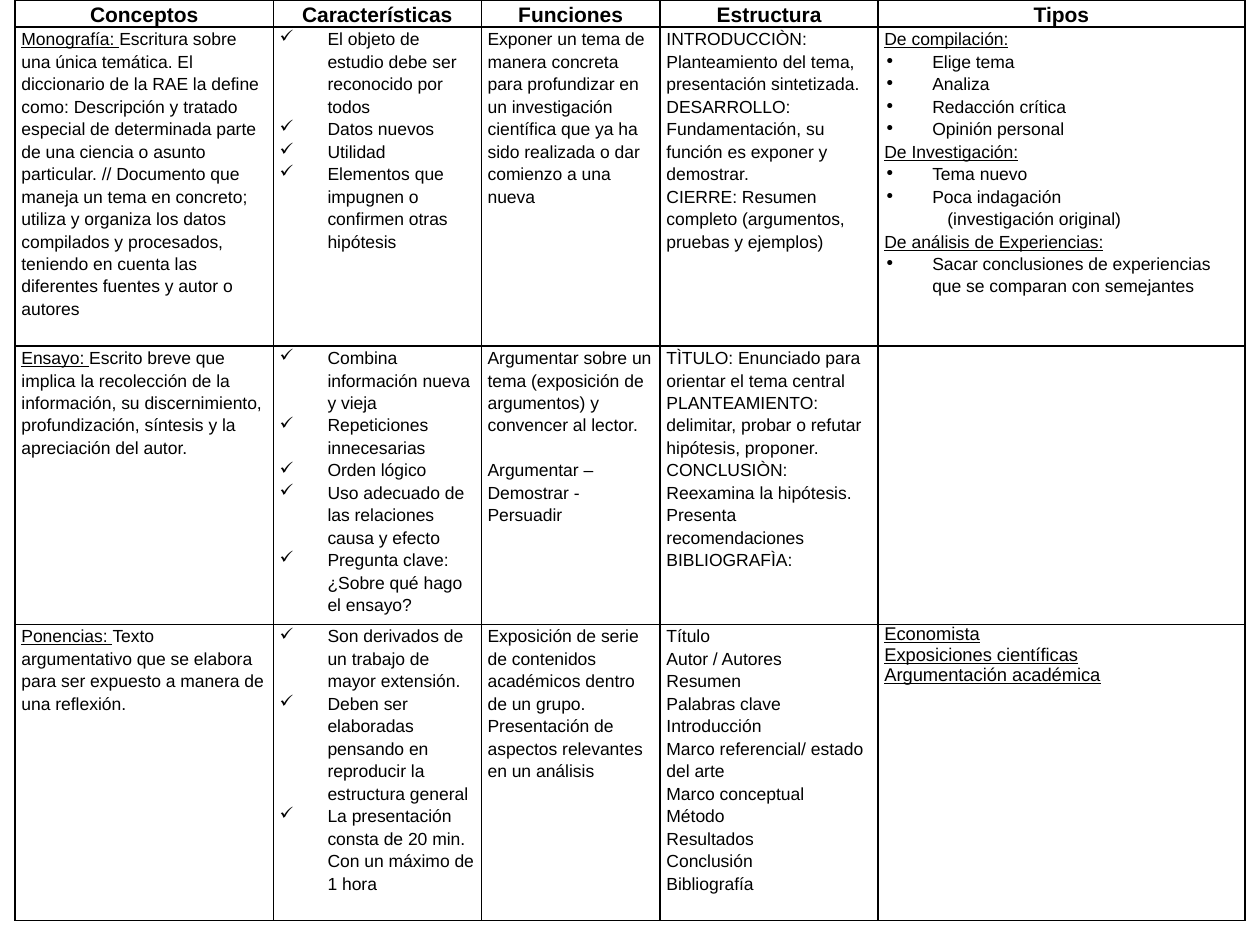
"""Build a slide with a table that compares three kinds of academic text."""
from dataclasses import dataclass

from lxml.etree import SubElement as Sub
from pptx import Presentation as Deck
from pptx.dml.color import RGBColor as Color
from pptx.enum.text import PP_ALIGN as Align
from pptx.oxml import parse_xml
from pptx.oxml.ns import nsdecls, qn
from pptx.util import Inches, Pt


@dataclass
class Theme:
    font: str = "Arial"
    ink: str = "000000"
    head: float = 12
    body: float = 10
    large: float = 10.5
    space: float = 1.15
    rule: float = 1
    pad: float = 0.05
    hang: float = 0.38


@dataclass
class Par:
    text: str = ""
    lead: str = ""
    mark: str = ""
    left: float = 0
    gap: float = 0
    size: float = Theme.body
    space: float = Theme.space
    bold: bool = False
    align: Align = Align.LEFT


def plain(*texts, **style):
    return [Par(text, **style) for text in texts]


def ticks(*texts):
    return plain(*texts, mark="✓")


def dots(*texts):
    return plain(*texts, mark="∙")


def title(text):
    return plain(text, size=Theme.head, bold=True, align=Align.CENTER)


class Page:
    def __init__(self, deck, theme):
        self.theme = theme
        self.slide = deck.slides.add_slide(deck.slide_layouts[6])

    def table(self, left, top, cols, rows, data):
        frame = self.slide.shapes.add_table(
            len(rows), len(cols), Inches(left), Inches(top),
            Inches(sum(cols)), Inches(sum(rows)))
        grid = frame.table
        grid.first_row = grid.horz_banding = False
        for col, width in zip(grid.columns, cols):
            col.width = Inches(width)
        for row, height, cells in zip(grid.rows, rows, data):
            row.height = Inches(height)
            for cell, pars in zip(row.cells, cells):
                self.cell(cell, pars)

    def cell(self, cell, pars):
        cell.margin_left = cell.margin_right = Inches(self.theme.pad)
        cell.margin_top = cell.margin_bottom = 0
        cell.fill.background()
        self.border(cell)
        frame = cell.text_frame
        for i, par in enumerate(pars):
            self.par(frame.add_paragraph() if i else frame.paragraphs[0], par)

    def border(self, cell):
        props = cell._tc.get_or_add_tcPr()
        for i, side in enumerate("LRTB"):
            props.insert(i, parse_xml(
                f'<a:ln{side} {nsdecls("a")} w="{Pt(self.theme.rule)}"><a:solidFill>'
                f'<a:srgbClr val="{self.theme.ink}"/></a:solidFill></a:ln{side}>'))

    def par(self, para, par):
        para.alignment = par.align
        para.line_spacing = par.space
        if par.gap:
            para.space_before = Pt(par.gap)
        if par.left:
            para._p.get_or_add_pPr().set("marL", str(Inches(par.left)))
        if par.mark:
            self.bullet(para, par.mark)
        font = para.font
        font.name, font.size, font.bold = self.theme.font, Pt(par.size), par.bold
        font.color.rgb = Color.from_string(self.theme.ink)
        for text, line in ((par.lead, True), (par.text, False)):
            if text:
                run = para.add_run()
                run.text = text
                if line:
                    run.font.underline = True

    def bullet(self, para, mark):
        props = para._p.get_or_add_pPr()
        hang = Inches(self.theme.hang)
        props.set("marL", str(hang))
        props.set("indent", str(-hang))
        Sub(Sub(props, qn("a:buClr")), qn("a:srgbClr")).set("val", self.theme.ink)
        Sub(props, qn("a:buChar")).set("char", mark)


HEADS = ["Conceptos", "Características", "Funciones", "Estructura", "Tipos"]

ESSAY = [
    [Par("Escrito breve que implica la recolección de la información, su "
         "discernimiento, profundización, síntesis y la apreciación del autor.",
         lead="Ensayo: ")],
    ticks("Combina información nueva y vieja", "Repeticiones innecesarias",
          "Orden lógico", "Uso adecuado de las relaciones causa y efecto",
          "Pregunta clave: ¿Sobre qué hago el ensayo?"),
    [Par("Argumentar sobre un tema (exposición de argumentos) y convencer al lector."),
     Par("Argumentar – Demostrar - Persuadir", gap=12.8)],
    plain("TÌTULO: Enunciado para orientar el tema central",
          "PLANTEAMIENTO: delimitar, probar o refutar hipótesis, proponer.",
          "CONCLUSIÒN: Reexamina la hipótesis. Presenta recomendaciones",
          "BIBLIOGRAFÌA:"),
    [],
]

STUDY = [
    [Par("Escritura sobre una única temática. El diccionario de la RAE la define "
         "como: Descripción y tratado especial de determinada parte de una ciencia "
         "o asunto particular. // Documento que maneja un tema en concreto; utiliza "
         "y organiza los datos compilados y procesados, teniendo en cuenta las "
         "diferentes fuentes y autor o autores", lead="Monografía: ")],
    ticks("El objeto de estudio debe ser reconocido por todos", "Datos nuevos",
          "Utilidad", "Elementos que impugnen o confirmen otras hipótesis"),
    plain("Exponer un tema de manera concreta para profundizar en un investigación "
          "científica que ya ha sido realizada o dar comienzo a una nueva"),
    plain("INTRODUCCIÒN: Planteamiento del tema, presentación sintetizada.",
          "DESARROLLO: Fundamentación, su función es exponer y demostrar.",
          "CIERRE: Resumen completo (argumentos, pruebas y ejemplos)"),
    [Par(lead="De compilación:"),
     *dots("Elige tema", "Analiza", "Redacción crítica", "Opinión personal"),
     Par(lead="De Investigación:"),
     *dots("Tema nuevo", "Poca indagación"),
     Par("(investigación original)", left=0.5),
     Par(lead="De análisis de Experiencias:"),
     *dots("Sacar conclusiones de experiencias que se comparan con semejantes")],
]

PAPER = [
    [Par("Texto argumentativo que se elabora para ser expuesto a manera de una "
         "reflexión.", lead="Ponencias: ")],
    ticks("Son derivados de un trabajo de mayor extensión.",
          "Deben ser elaboradas pensando en reproducir la estructura general",
          "La presentación consta de 20 min. Con un máximo de 1 hora"),
    plain("Exposición de serie de contenidos académicos dentro de un grupo.",
          "Presentación de aspectos relevantes en un análisis"),
    plain("Título", "Autor / Autores", "Resumen", "Palabras clave", "Introducción",
          "Marco referencial/ estado del arte", "Marco conceptual", "Método",
          "Resultados", "Conclusión", "Bibliografía"),
    [Par(lead=text, size=Theme.large, space=1.0) for text in
     ("Economista", "Exposiciones científicas", "Argumentación académica")],
]


def main():
    deck = Deck()
    deck.slide_width, deck.slide_height = Inches(10), Inches(7.5)
    page = Page(deck, Theme())
    page.table(0.12, 0, [2.05, 1.65, 1.42, 1.73, 2.91], [0.21, 2.53, 2.21, 2.35],
               [[title(head) for head in HEADS], STUDY, ESSAY, PAPER])
    deck.save("out.pptx")


if __name__ == "__main__":
    main()
